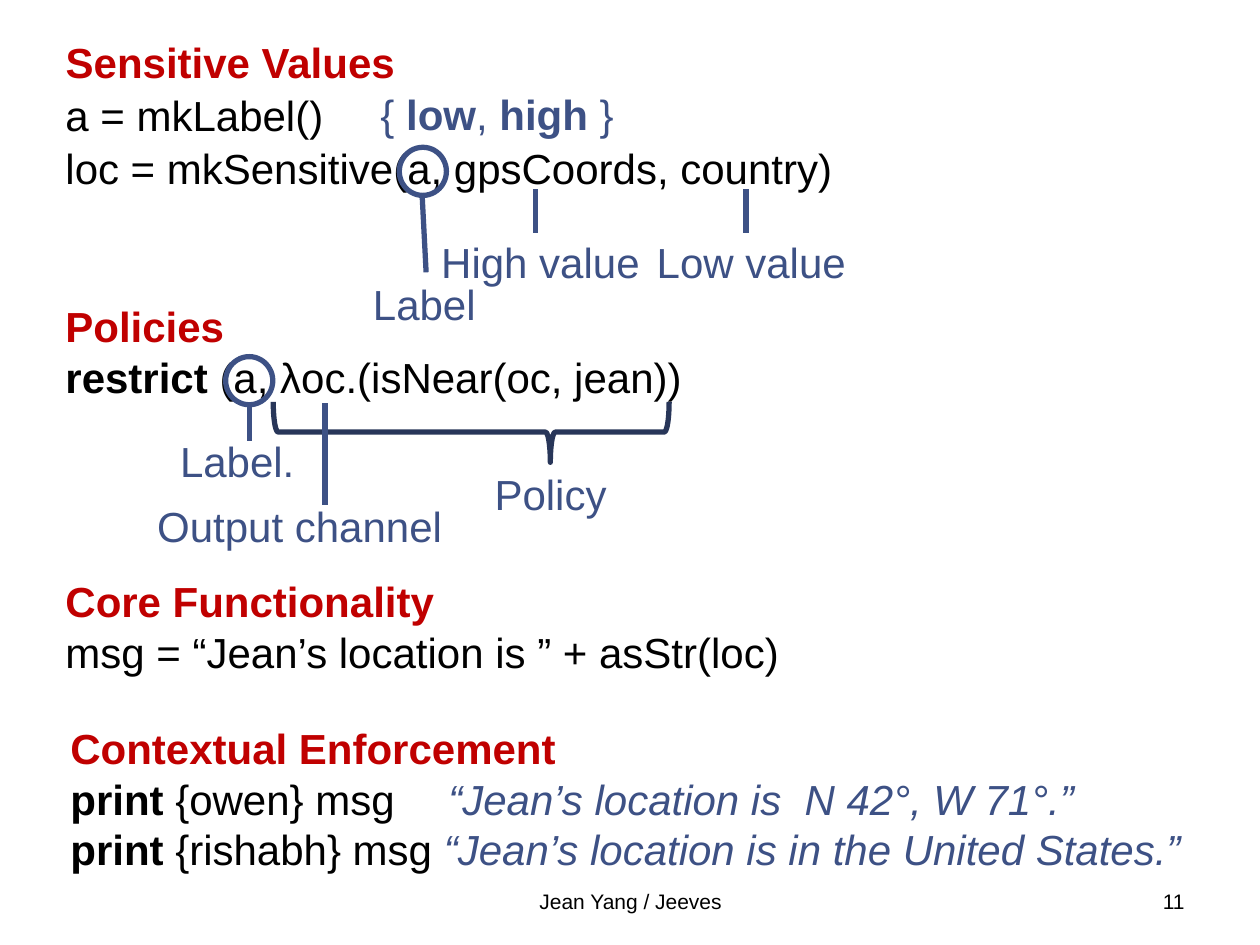
from dataclasses import dataclass

from lxml.etree import SubElement
from pptx import Presentation
from pptx.dml.color import RGBColor
from pptx.enum.shapes import MSO_CONNECTOR, MSO_SHAPE
from pptx.enum.text import MSO_ANCHOR, MSO_AUTO_SIZE, PP_ALIGN
from pptx.oxml.ns import qn
from pptx.util import Cm, Pt


@dataclass(frozen=True)
class Theme:
    font: str = "Arial"
    heading: RGBColor = RGBColor(0xC0, 0x00, 0x00)
    code: RGBColor = RGBColor(0x00, 0x00, 0x00)
    note: RGBColor = RGBColor(0x3D, 0x51, 0x85)
    brace: RGBColor = RGBColor(0x28, 0x36, 0x59)
    text_size: Pt = Pt(24)
    footer_size: Pt = Pt(12)
    line_width: Pt = Pt(3)


theme = Theme()


def add_run(p, text, color=theme.code, size=theme.text_size, bold=False, italic=False):
    r = p.add_run()
    r.text = text
    r.font.name = theme.font
    r.font.size = size
    r.font.bold = bold
    r.font.italic = italic
    r.font.color.rgb = color


def add_box(x, y, w, h=1.27, anchor=MSO_ANCHOR.TOP, align=PP_ALIGN.LEFT):
    tf = s.shapes.add_textbox(Cm(x), Cm(y), Cm(w), Cm(h)).text_frame
    tf.word_wrap = True
    tf.vertical_anchor = anchor
    tf.paragraphs[0].alignment = align
    return tf


prs = Presentation()
prs.slide_width, prs.slide_height = Cm(25.4), Cm(19.05)
s = prs.slides.add_slide(prs.slide_layouts[5])

title = s.shapes.title
title.left, title.top, title.width, title.height = Cm(1.07), Cm(0.61), Cm(10.16), Cm(1.27)
tf = title.text_frame
tf.auto_size = MSO_AUTO_SIZE.NONE
tf.vertical_anchor = MSO_ANCHOR.TOP
p = tf.paragraphs[0]
p.alignment = PP_ALIGN.LEFT
add_run(p, "Sensitive Values", color=theme.heading, bold=True)

heading = {"color": theme.heading, "bold": True}
keyword = {"bold": True}
note = {"color": theme.note}
label = {"color": theme.note, "bold": True}
output = {"color": theme.note, "italic": True}

blocks = [
    (1.07, 1.68, 10.16, 1.27, [[("a = mkLabel()", {})]]),
    (1.07, 2.74, 22.66, 1.27, [[("loc = mkSensitive(a, gpsCoords, country)", {})]]),
    (7.42, 1.65, 5.92, 1.27, [
        [("{ ", note), ("low", label), (", ", note), ("high", label), (" }", note)],
    ]),
    (1.07, 5.94, 17.15, 2.31, [
        [("Policies", heading)],
        [("restrict ", keyword), ("(a, λoc.(isNear(oc, jean))", {})],
    ]),
    (1.07, 11.48, 19.43, 2.31, [
        [("Core Functionality", heading)],
        [("msg = “Jean’s location is ” + asStr(loc)", {})],
    ]),
    (1.17, 14.45, 24.03, 3.33, [
        [("Contextual Enforcement", heading)],
        [("print", keyword), (" {owen} msg \t", {}),
         ("“Jean’s location is  N 42°, W 71°.”", output)],
        [("print", keyword), (" {rishabh} msg ", {}),
         ("“Jean’s location is in the United States.”", output)],
    ]),
]
for x, y, w, h, lines in blocks:
    tf = add_box(x, y, w, h)
    for i, line in enumerate(lines):
        p = tf.add_paragraph() if i else tf.paragraphs[0]
        for text, style in line:
            add_run(p, text, **style)

for text, x, y, w, align in [
    ("Label", 6.55, 5.49, 4.01, PP_ALIGN.CENTER),
    ("High value", 7.82, 4.65, 6.15, PP_ALIGN.CENTER),
    ("Low value", 12.07, 4.65, 6.15, PP_ALIGN.CENTER),
    ("Label.", 3.38, 8.66, 4.01, PP_ALIGN.LEFT),
    ("Output channel", 2.92, 9.96, 6.6, PP_ALIGN.LEFT),
    ("Policy", 7.8, 9.32, 6.6, PP_ALIGN.CENTER),
]:
    add_run(add_box(x, y, w, align=align).paragraphs[0], text, **note)

for text, x, w, align in [
    ("Jean Yang / Jeeves", 8.69, 8.05, PP_ALIGN.CENTER),
    ("11", 18.21, 5.92, PP_ALIGN.RIGHT),
]:
    tf = add_box(x, 17.65, w, 1.02, MSO_ANCHOR.MIDDLE, align)
    add_run(tf.paragraphs[0], text, size=theme.footer_size)

for kind, x, y, w, h, color in [
    (MSO_SHAPE.OVAL, 8.05, 2.97, 0.95, 0.97, theme.note),
    (MSO_SHAPE.OVAL, 4.55, 7.19, 0.95, 0.97, theme.note),
    (MSO_SHAPE.LEFT_BRACE, 8.89, 4.72, 1.22, 7.98, theme.brace),
]:
    sp = s.shapes.add_shape(kind, Cm(x), Cm(y), Cm(w), Cm(h))
    sp.shadow.inherit = False
    sp.fill.background()
    sp.line.color.rgb = color
    sp.line.width = theme.line_width
    if kind == MSO_SHAPE.LEFT_BRACE:
        sp.rotation = 270
        sp.adjustments[0], sp.adjustments[1] = 0.08, 0.7

for x1, y1, x2, y2 in [
    (8.51, 3.94, 8.59, 5.49),
    (10.8, 3.81, 10.8, 4.7),
    (15.04, 3.81, 15.04, 4.7),
    (5.03, 8.15, 5.03, 8.89),
    (6.55, 8.13, 6.55, 10.19),
]:
    line = s.shapes.add_connector(MSO_CONNECTOR.STRAIGHT, Cm(x1), Cm(y1), Cm(x2), Cm(y2))
    line.line.color.rgb = theme.note
    line.line.width = theme.line_width
    SubElement(line._element.spPr, qn("a:effectLst"))

prs.save("out.pptx")
